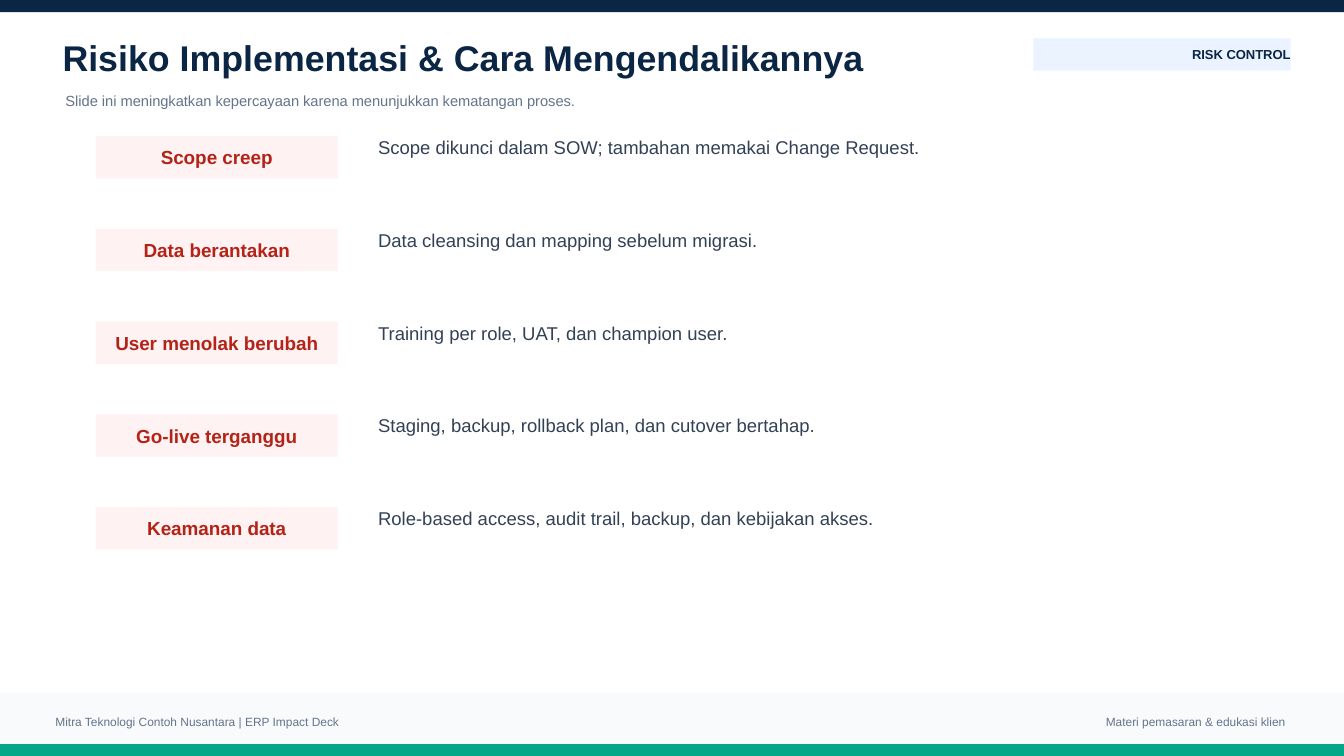
from pptx import Presentation
from pptx import util as u
from pptx.dml.color import RGBColor
from pptx.enum import shapes, text

PX = 9144  # EMU per px, 100 px to the inch
WIDTH, HEIGHT = 1333, 750
FONT = "Arial"
COLORS = {
    "navy": "0B2545",
    "green": "00A887",
    "footer": "F8FAFC",
    "muted": "64748B",
    "tag": "EAF3FF",
    "risk_fill": "FEF2F2",
    "risk_text": "B42318",
    "body": "334155",
}
LEFT, CENTER, RIGHT = text.PP_ALIGN.LEFT, text.PP_ALIGN.CENTER, text.PP_ALIGN.RIGHT
TOP, MIDDLE = text.MSO_ANCHOR.TOP, text.MSO_ANCHOR.MIDDLE

RISKS = [
    ("Scope creep", "Scope dikunci dalam SOW; tambahan memakai Change Request."),
    ("Data berantakan", "Data cleansing dan mapping sebelum migrasi."),
    ("User menolak berubah", "Training per role, UAT, dan champion user."),
    ("Go-live terganggu", "Staging, backup, rollback plan, dan cutover bertahap."),
    ("Keamanan data", "Role-based access, audit trail, backup, dan kebijakan akses."),
]


def emu(*lengths):
    return [u.Emu(length * PX) for length in lengths]


def write(shape, wording, size, color, bold=False, align=LEFT, anchor=MIDDLE):
    frame = shape.text_frame
    frame.word_wrap = True
    frame.auto_size = text.MSO_AUTO_SIZE.NONE
    frame.vertical_anchor = anchor
    frame.margin_left = frame.margin_top = frame.margin_right = frame.margin_bottom = 0
    frame.text = wording
    paragraph = frame.paragraphs[0]
    paragraph.alignment = align
    font = paragraph.font
    font.name, font.size, font.bold = FONT, u.Pt(size), bold
    font.color.rgb = RGBColor.from_string(COLORS[color])


def add_box(slide, box, fill):
    shape = slide.shapes.add_shape(shapes.MSO_SHAPE.RECTANGLE, *emu(*box))
    shape.shadow.inherit = False
    shape.fill.solid()
    shape.fill.fore_color.rgb = RGBColor.from_string(COLORS[fill])
    shape.line.fill.background()
    return shape


def add_text(slide, box, *args, **style):
    write(slide.shapes.add_textbox(*emu(*box)), *args, **style)


def add_frame(slide, width, height):
    """Draw the top and bottom bars and the footer band with its two captions."""
    bar, band = 12, 51
    band_top = height - bar - band
    add_box(slide, (0, 0, width, bar), "navy")
    add_box(slide, (0, height - bar, width, bar), "green")
    add_box(slide, (0, band_top, width, band), "footer")
    caption_top = band_top + 20
    add_text(slide, (55, caption_top, 560, 18),
             "Mitra Teknologi Contoh Nusantara | ERP Impact Deck", 8.5, "muted")
    add_text(slide, (width - 488, caption_top, 430, 18),
             "Materi pemasaran & edukasi klien", 8.5, "muted", align=RIGHT)


def add_header(slide, left, top):
    title = slide.shapes.title
    title.left, title.top, title.width, title.height = emu(left, top, 940, 42)
    write(title, "Risiko Implementasi & Cara Mengendalikannya", 25.5, "navy", bold=True)
    add_text(slide, (left + 3, top + 50, 1020, 28),
             "Slide ini meningkatkan kepercayaan karena menunjukkan kematangan proses.",
             10.5, "muted")
    tag = add_box(slide, (left + 963, top + 2, 255, 32), "tag")
    write(tag, "RISK CONTROL", 9.3, "navy", bold=True, align=RIGHT)


def add_risks(slide, left, top, pitch):
    row_height = 42
    for index, (risk, control) in enumerate(RISKS):
        row_top = top + index * pitch
        label = add_box(slide, (left, row_top, 240, row_height), "risk_fill")
        write(label, risk, 13.5, "risk_text", bold=True, align=CENTER)
        add_text(slide, (left + 280, row_top, 820, row_height),
                 control, 13.2, "body", anchor=TOP)


def main():
    presentation = Presentation()
    presentation.slide_width, presentation.slide_height = emu(WIDTH, HEIGHT)
    slide = presentation.slides.add_slide(presentation.slide_layouts.get_by_name("Title Only"))
    add_frame(slide, WIDTH, HEIGHT)
    add_header(slide, 62, 36)
    add_risks(slide, 95, 135, pitch=92)
    presentation.save("out.pptx")


if __name__ == "__main__":
    main()
